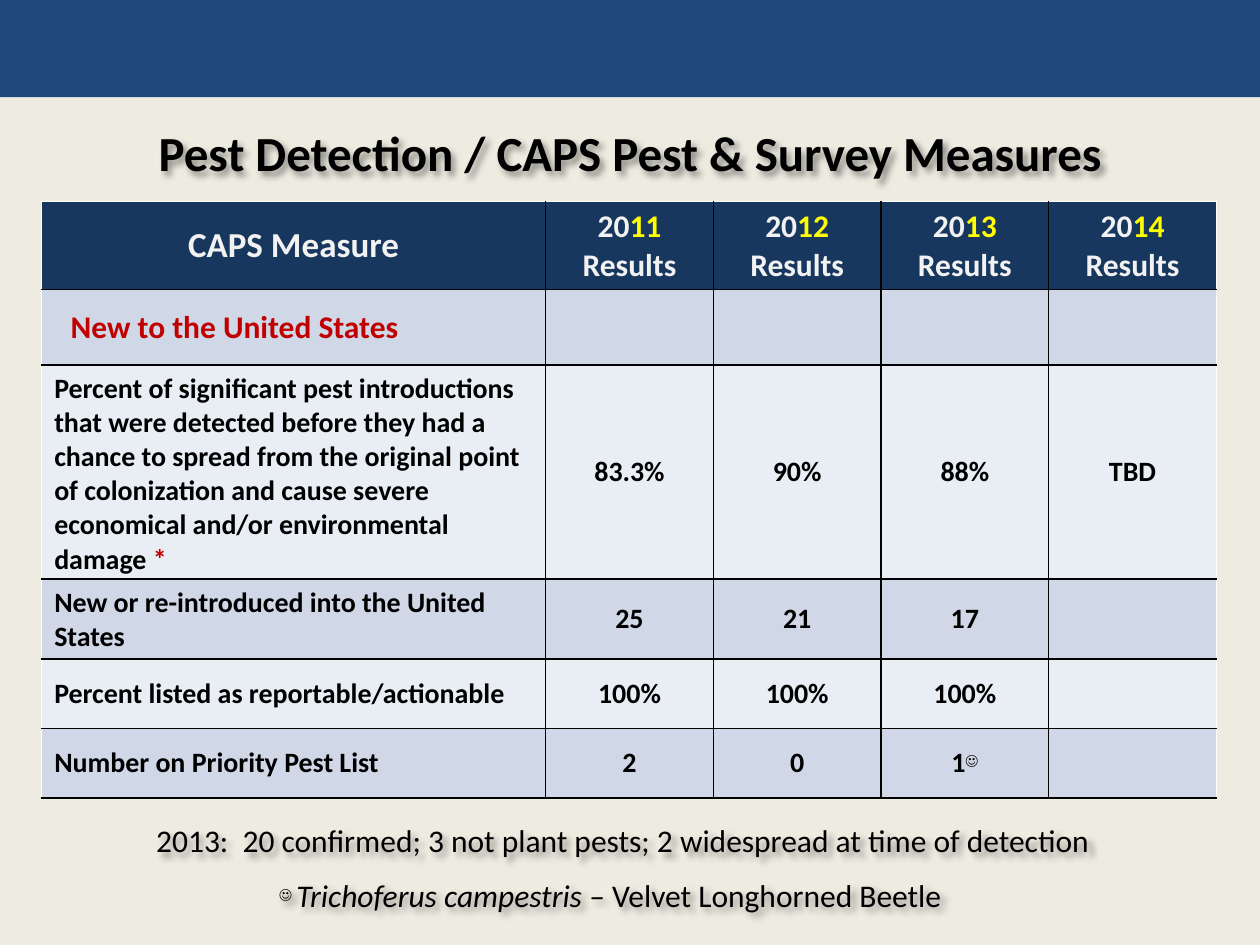
"""Build the slide on pest detection and survey measures."""
import pptx
import pptx.dml.color
import pptx.enum.shapes
import pptx.enum.text
import pptx.oxml
import pptx.oxml.ns
import pptx.util
from lxml import etree
from pptx.util import Cm

COLOURS = {
    "page": "EEECE1", "band": "1F497D", "header": "17375E",
    "odd": "D0D8E8", "even": "E9EDF4", "black": "000000",
    "white": "FFFFFF", "pale": "F2F2F2", "yellow": "FFFF00", "red": "C00000",
}
ALIGN = pptx.enum.text.PP_ALIGN
MIDDLE = pptx.enum.text.MSO_ANCHOR.MIDDLE
SMILEY = ("☺", {"size": 14, "raised": True})
COLUMN_WIDTHS = [10.16] + [3.38] * 4
ROW_HEIGHTS = [1.27, 1.52, 3.3, 1.4, 1.4, 1.4]
YEARS = ["11", "12", "13", "14"]
MEASURES = [
    ([("New to the United States", {"size": 18, "colour": "red"})], ["", "", "", ""]),
    ([("Percent of significant pest introductions that were detected before they had "
       "a chance to spread from the original point of colonization and cause severe "
       "economical and/or environmental damage ", {}), ("*", {"colour": "red"})],
     ["83.3%", "90%", "88%", "TBD"]),
    ([("New or re-introduced into the United States", {})], ["25", "21", "17", ""]),
    ([("Percent listed as reportable/actionable", {})], ["100%", "100%", "100%", ""]),
    ([("Number on Priority Pest List", {})], ["2", "0", [("1", {}), SMILEY], ""]),
]


def rgb(name):
    """Return the named colour."""
    return pptx.dml.color.RGBColor.from_string(COLOURS[name])


def write(para, spans, size, colour="black", bold=None, align=ALIGN.LEFT):
    """Fill a paragraph with spans, each a text and its own differences."""
    para.alignment = align
    para.font.name = "Calibri"
    para.font.size = pptx.util.Pt(size)
    para.font.bold = bold
    for text, style in spans:
        span = para.add_run()
        span.text = text
        span.font.name = "Calibri"
        span.font.size = pptx.util.Pt(style.get("size", size))
        span.font.color.rgb = rgb(style.get("colour", colour))
        span.font.bold = style.get("bold", bold)
        span.font.italic = style.get("italic")
        if style.get("raised"):
            span._r.get_or_add_rPr().set("baseline", "30000")


def add_shadow(box):
    """Give the text of an unfilled box a soft shadow."""
    box._element.spPr.append(pptx.oxml.parse_xml(
        f'<a:effectLst {pptx.oxml.ns.nsdecls("a")}>'
        '<a:outerShdw blurRad="50800" dist="38100" dir="2700000" algn="tl">'
        '<a:srgbClr val="000000"><a:alpha val="40000"/></a:srgbClr>'
        '</a:outerShdw></a:effectLst>'))


def add_text(page, place, spans, size, wrap=True, **style):
    """Add a shadowed text box."""
    box = page.shapes.add_textbox(*map(Cm, place))
    box.text_frame.word_wrap = wrap
    write(box.text_frame.paragraphs[0], spans, size, **style)
    add_shadow(box)
    return box


def add_band(page, width):
    """Add the plain band across the top."""
    band = page.shapes.add_shape(
        pptx.enum.shapes.MSO_SHAPE.RECTANGLE, 0, 0, width, Cm(1.96))
    band.shadow.inherit = False
    band.fill.solid()
    band.fill.fore_color.rgb = rgb("band")
    band.line.fill.background()


def set_border(cell, side, colour):
    """Draw one side of a cell."""
    line = etree.SubElement(
        cell._tc.get_or_add_tcPr(), pptx.oxml.ns.qn(f"a:ln{side}"), w="12700")
    fill = etree.SubElement(line, pptx.oxml.ns.qn("a:solidFill"))
    etree.SubElement(fill, pptx.oxml.ns.qn("a:srgbClr"), val=COLOURS[colour])


def style_cell(cell, row, column):
    """Set the anchor, borders and fill that a cell's place calls for."""
    cell.vertical_anchor = MIDDLE
    outer = {"L": column == 0, "R": column == len(YEARS), "T": row == 0, "B": False}
    for side, is_outer in outer.items():
        set_border(cell, side, "white" if is_outer else "black")
    cell.fill.solid()
    cell.fill.fore_color.rgb = rgb("header" if row == 0 else "odd" if row % 2 else "even")


def add_measures(page):
    """Add the table of measures by year."""
    frame = page.shapes.add_table(
        len(ROW_HEIGHTS), len(COLUMN_WIDTHS), Cm(0.84), Cm(4.06),
        Cm(sum(COLUMN_WIDTHS)), Cm(sum(ROW_HEIGHTS)))
    table = frame.table
    for column, width in zip(table.columns, COLUMN_WIDTHS):
        column.width = Cm(width)
    for row, height in zip(table.rows, ROW_HEIGHTS):
        row.height = Cm(height)
    years = [[("20", {}), (f"{year} ", {"colour": "yellow"}), ("Results", {})]
             for year in YEARS]
    rows = [([("CAPS Measure", {"size": 20})], years)] + MEASURES
    for row, (label, results) in enumerate(rows):
        size, colour = (18, "pale") if row == 0 else (16, "black")
        for column, content in enumerate([label] + results):
            cell = table.cell(row, column)
            style_cell(cell, row, column)
            spans = [(content, {})] if isinstance(content, str) else content
            centred = row == 0 or column > 0
            if content:
                write(cell.text_frame.paragraphs[0], spans, size, colour, True,
                      ALIGN.CENTER if centred else ALIGN.LEFT)
    heading = table.cell(1, 0).text_frame.paragraphs[0]
    heading._p.get_or_add_pPr().set("marL", str(Cm(0.33)))


def main():
    """Build and save the deck."""
    deck = pptx.Presentation()
    deck.slide_width, deck.slide_height = Cm(25.4), Cm(19.05)
    page = deck.slides.add_slide(deck.slide_layouts[6])
    page.background.fill.solid()
    page.background.fill.fore_color.rgb = rgb("page")
    add_band(page, deck.slide_width)
    title = add_text(page, (1.27, 2.08, 22.86, 1.98),
                     [("Pest Detection / CAPS Pest & Survey Measures", {})],
                     28, bold=True, align=ALIGN.CENTER)
    title.text_frame.vertical_anchor = MIDDLE
    add_measures(page)
    add_text(page, (2.9, 16.43, 19.58, 1.02),
             [("2013:  20 confirmed; 3 not plant pests; "
               "2 widespread at time of detection", {})], 18, wrap=False)
    add_text(page, (5.38, 17.53, 14.61, 1.02),
             [(SMILEY[0], {**SMILEY[1], "bold": True}),
              (" ", {"bold": True, "raised": True}),
              ("Trichoferus campestris ", {"italic": True}),
              ("– Velvet Longhorned Beetle", {})], 18)
    deck.save("out.pptx")


if __name__ == "__main__":
    main()
